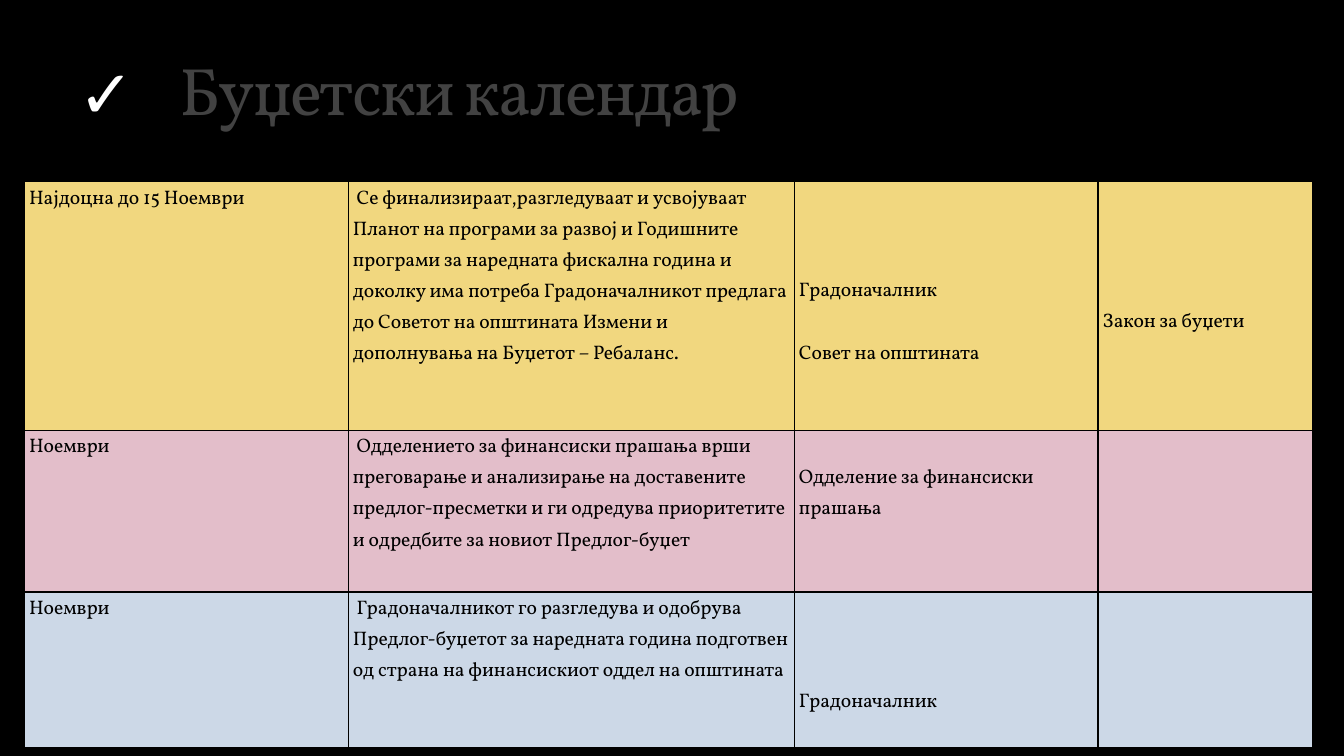
from dataclasses import dataclass

from lxml import etree
from pptx import Presentation
from pptx.dml.color import RGBColor
from pptx.enum.text import MSO_ANCHOR, MSO_AUTO_SIZE
from pptx.oxml.ns import qn
from pptx.util import Cm, Pt

TOP = MSO_ANCHOR.TOP
NO_AUTOFIT = MSO_AUTO_SIZE.NONE
FONT = "Vollkorn"
BLACK, WHITE = "000000", "FFFFFF"
LINE_PITCH = Pt(16.6)  # one line of table text
COLUMN_WIDTHS = (6.12, 8.43, 5.74, 4.06)


@dataclass
class CellText:
    paragraphs: tuple[str, ...] = ()
    lines_above: int = 0
    first_indent: float = 0


@dataclass
class CalendarRow:
    color: str
    height: float
    cells: tuple[CellText, ...]


ROWS = (
    CalendarRow("F1D77F", 4.7, (
        CellText(("Најдоцна до 15 Ноември",)),
        CellText(("Се финализираат,разгледуваат и усвојуваат Планот на програми за развој "
                  "и Годишните програми за наредната фискална година и доколку има потреба "
                  "Градоначалникот предлага до Советот на општината Измени и дополнувања "
                  "на Буџетот – Ребаланс.",), first_indent=0.07),
        CellText(("Градоначалник", "Совет на општината"), lines_above=3),
        CellText(("Закон за буџети",), lines_above=4),
    )),
    CalendarRow("E3BECA", 3.06, (
        CellText(("Ноември",)),
        CellText(("Одделението за финансиски прашања врши преговарање и анализирање на "
                  "доставените предлог-пресметки и ги одредува приоритетите и одредбите "
                  "за новиот Предлог-буџет",), first_indent=0.07),
        CellText(("Одделение за финансиски прашања",), lines_above=1),
        CellText(),
    )),
    CalendarRow("CCD8E7", 2.95, (
        CellText(("Ноември",)),
        CellText(("Градоначалникот го разгледува и одобрува Предлог-буџетот за наредната "
                  "година подготвен од страна на финансискиот оддел на општината",),
                 first_indent=0.07),
        CellText(("Градоначалник",), lines_above=3),
        CellText(),
    )),
)


def rgb(color: str) -> RGBColor:
    return RGBColor.from_string(color)


def add_element(parent, tag: str, **attributes: str):
    return etree.SubElement(parent, qn(tag), attributes)


def style_font(font, size: float, color: str) -> None:
    font.name = FONT
    font.size = Pt(size)
    font.color.rgb = rgb(color)


def add_title(slide, text: str) -> None:
    shape = slide.shapes.add_textbox(Cm(1.24), Cm(0.66), Cm(21.59), Cm(2.01))
    frame = shape.text_frame
    frame.text = text
    frame.word_wrap = True
    frame.auto_size = NO_AUTOFIT
    frame.vertical_anchor = TOP
    frame.margin_left = frame.margin_right = Cm(0.25)
    frame.margin_top = frame.margin_bottom = Cm(0.25)
    paragraph = frame.paragraphs[0]
    run = paragraph.runs[0]
    style_font(run.font, 36, WHITE)
    run_properties = run.font._element
    run_properties.set("spc", "-100")
    # Faint white letters beside a solid white check mark
    fill_color = run_properties.find(qn("a:solidFill"))[0]
    add_element(fill_color, "a:alpha", val="25000")
    properties = paragraph._p.get_or_add_pPr()
    properties.set("marL", str(Cm(1.9)))
    properties.set("indent", str(-Cm(1.9)))
    add_element(add_element(properties, "a:buClr"), "a:srgbClr", val=WHITE)
    add_element(properties, "a:buFont", typeface="Noto Sans Symbols")
    add_element(properties, "a:buChar", char="✓")


def add_borders(cell) -> None:
    properties = cell._tc.get_or_add_tcPr()
    for side in ("a:lnL", "a:lnR", "a:lnT", "a:lnB"):
        line = add_element(properties, side, w=str(Pt(0.75)))
        add_element(add_element(line, "a:solidFill"), "a:srgbClr", val=BLACK)


def fill_cell(cell, content: CellText, color: str) -> None:
    cell.margin_left = cell.margin_right = Cm(0.09)
    cell.margin_top = content.lines_above * LINE_PITCH
    cell.margin_bottom = 0
    cell.vertical_anchor = TOP
    add_borders(cell)
    cell.fill.solid()
    cell.fill.fore_color.rgb = rgb(color)
    cell.text_frame.text = "\n".join(content.paragraphs)
    for index, paragraph in enumerate(cell.text_frame.paragraphs):
        paragraph.line_spacing = 1.15
        if index:
            paragraph.space_before = LINE_PITCH
        if content.first_indent:
            paragraph._p.get_or_add_pPr().set("indent", str(Cm(content.first_indent)))
        for run in paragraph.runs:
            style_font(run.font, 10.5, BLACK)


def add_calendar(slide, rows: tuple[CalendarRow, ...]) -> None:
    height = sum(row.height for row in rows)
    table = slide.shapes.add_table(
        len(rows), len(COLUMN_WIDTHS), Cm(0.46), Cm(3.43),
        Cm(sum(COLUMN_WIDTHS)), Cm(height)).table
    table.first_row = table.horz_banding = False
    for column, width in zip(table.columns, COLUMN_WIDTHS):
        column.width = Cm(width)
    for table_row, row in zip(table.rows, rows):
        table_row.height = Cm(row.height)
        for cell, content in zip(table_row.cells, row.cells):
            fill_cell(cell, content, row.color)


def main() -> None:
    presentation = Presentation()
    presentation.slide_width = Cm(25.4)
    presentation.slide_height = Cm(14.29)
    slide = presentation.slides.add_slide(presentation.slide_layouts[6])
    slide.background.fill.solid()
    slide.background.fill.fore_color.rgb = rgb(BLACK)

    add_title(slide, "Буџетски календар")
    add_calendar(slide, ROWS)
    presentation.save("out.pptx")


if __name__ == "__main__":
    main()
